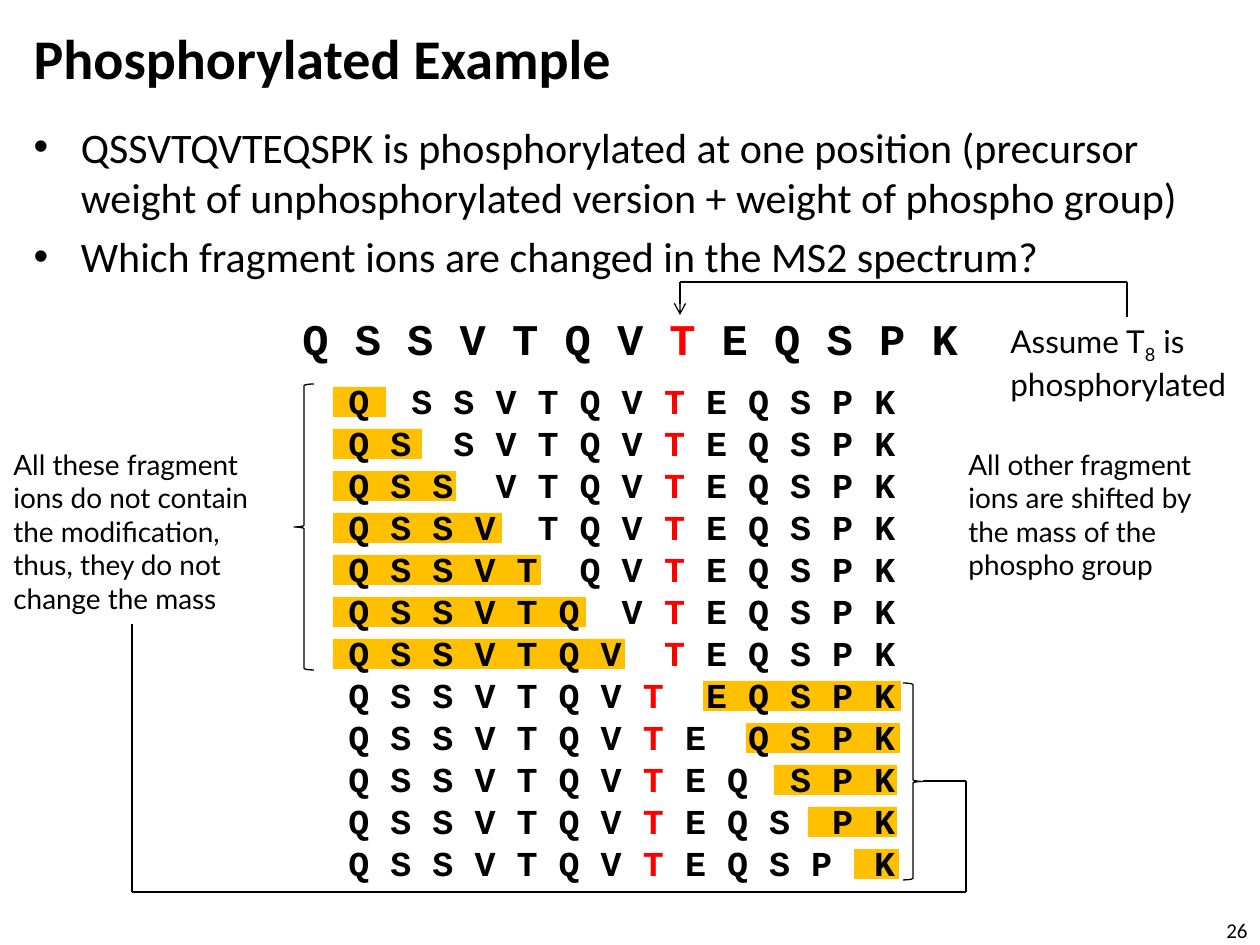
from itertools import pairwise

from lxml.etree import SubElement
from pptx import Presentation
from pptx.dml.color import RGBColor
from pptx.enum.shapes import MSO_CONNECTOR, MSO_SHAPE
from pptx.enum.text import MSO_ANCHOR, MSO_AUTO_SIZE, PP_ALIGN
from pptx.oxml.ns import qn
from pptx.util import Emu, Pt

PEPTIDE = "QSSVTQVTEQSPK"
BLACK, RED, GOLD = "000000", "FF0000", "FFC000"
ROW_TOP, ROW_PITCH, ROW_HEIGHT = 387, 42, 30
HIGHLIGHTS = [(333, 53), (333, 89), (333, 123), (333, 169), (333, 208),
              (333, 253), (333, 292), (703, 198), (746, 154), (774, 123),
              (808, 89), (854, 45)]


def px(n):
    return Emu(round(n * 914400 / 126))


def rgb(value):
    return RGBColor.from_string(value)


def place(sp, x, y, w, h):
    sp.left, sp.top, sp.width, sp.height = px(x), px(y), px(w), px(h)


def style(p, font, size, bold=False):
    p.font.name, p.font.size, p.font.bold = font, Pt(size), bold
    p.font.color.rgb = rgb(BLACK)


def fill_placeholder(sp, box, lines, size, bold=False):
    place(sp, *box)
    tf = sp.text_frame
    tf.auto_size = MSO_AUTO_SIZE.NONE
    tf.text = "\n".join(lines)
    for p in tf.paragraphs:
        p.alignment = PP_ALIGN.LEFT
        style(p, "Calibri", size, bold)


def add_text(s, box, text, font, size, align=PP_ALIGN.LEFT):
    tf = s.shapes.add_textbox(*map(px, box)).text_frame
    tf.word_wrap = True
    tf.text = text
    p = tf.paragraphs[0]
    p.alignment = align
    style(p, font, size)
    return tf


def add_sequences(s, box, sequences, size, align=PP_ALIGN.LEFT):
    tf = s.shapes.add_textbox(*map(px, box)).text_frame
    tf.word_wrap = True
    for i, sequence in enumerate(sequences):
        p = tf.add_paragraph() if i else tf.paragraphs[0]
        p.alignment = align
        style(p, "Courier New", size, True)
        for part in sequence.rpartition("T"):
            r = p.add_run()
            r.text = part
            r.font.color.rgb = rgb(RED if part == "T" else BLACK)


def add_highlight(s, x, y, w):
    sp = s.shapes.add_shape(MSO_SHAPE.RECTANGLE, *map(px, (x, y, w, ROW_HEIGHT)))
    sp.shadow.inherit = False
    sp.fill.solid()
    sp.fill.fore_color.rgb = rgb(GOLD)
    sp.line.fill.background()


def add_brace(s, kind, box):
    sp = s.shapes.add_shape(kind, *map(px, box))
    sp.shadow.inherit = False
    sp.fill.background()
    sp.line.color.rgb = rgb(BLACK)
    sp.line.width = Pt(0.75)


def add_route(s, points, arrow=False):
    for start, end in pairwise(points):
        line = s.shapes.add_connector(MSO_CONNECTOR.STRAIGHT, *map(px, start + end))
        line.line.color.rgb = rgb(BLACK)
        line.line.width = Pt(0.75)
        if arrow and end == points[-1]:
            SubElement(line.line._get_or_add_ln(), qn("a:tailEnd"), type="arrow")
        SubElement(line._element.spPr, qn("a:effectLst"))


def add_assumption(s):
    tf = add_text(s, (998, 316, 262, 90), "Assume T", "Lato", 18)
    p = tf.paragraphs[0]
    subscript = p.add_run()
    subscript.text = "8"
    subscript.font._element.set("baseline", "-25000")
    p.add_run().text = " is phosphorylated"
    add_route(s, [(1127, 317), (1127, 282), (680, 282), (680, 315)], arrow=True)


def add_fragments(s):
    for i, (x, w) in enumerate(HIGHLIGHTS):
        add_highlight(s, x, ROW_TOP + i * ROW_PITCH, w)
    rows = [" ".join(PEPTIDE[:cut]) + "  " + " ".join(PEPTIDE[cut:])
            for cut in range(1, len(PEPTIDE))]
    add_sequences(s, (336, 373, 588, 520), rows, 20)


def add_annotations(s):
    add_brace(s, MSO_SHAPE.LEFT_BRACE, (294, 384, 20, 286))
    add_brace(s, MSO_SHAPE.RIGHT_BRACE, (903, 683, 20, 197))
    add_text(s, (1, 441, 282, 183), "All these fragment ions do not contain the "
             "modification, thus, they do not change the mass", "Lato", 16)
    add_route(s, [(923, 781), (966, 781), (966, 892), (132, 892), (132, 624)])
    add_text(s, (956, 441, 282, 149), "All other fragment ions are shifted by "
             "the mass of the phospho group", "Lato", 16)


def main():
    prs = Presentation()
    prs.slide_width, prs.slide_height = px(1260), px(945)
    s = prs.slides.add_slide(prs.slide_layouts[1])
    fill_placeholder(s.shapes.title, (21, 10, 924, 95),
                     ["Phosphorylated Example"], 32, True)
    fill_placeholder(s.placeholders[1], (21, 115, 1217, 190), [
        f"{PEPTIDE} is phosphorylated at one position (precursor weight of "
        "unphosphorylated version + weight of phospho group)",
        "Which fragment ions are changed in the MS2 spectrum?"], 24)
    add_sequences(s, (273, 306, 714, 66), [" ".join(PEPTIDE)], 25, PP_ALIGN.CENTER)
    add_assumption(s)
    add_fragments(s)
    add_annotations(s)
    number = add_text(s, (945, 916, 315, 29), "26", "Calibri", 12, PP_ALIGN.RIGHT)
    number.vertical_anchor = MSO_ANCHOR.MIDDLE
    prs.save("out.pptx")


if __name__ == "__main__":
    main()
